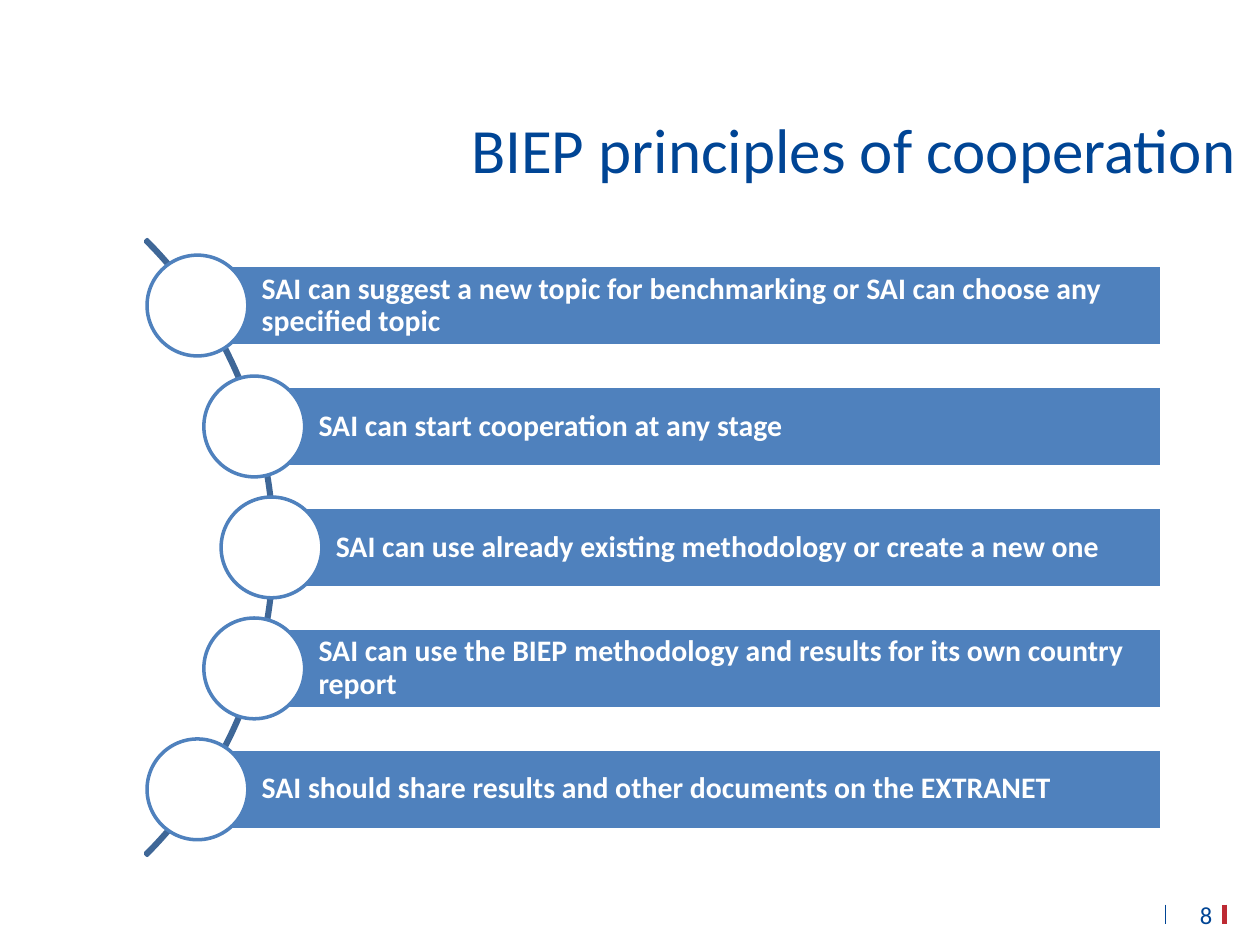
import math

import pptx
import pptx.dml.color
import pptx.enum.shapes
import pptx.enum.text
import pptx.oxml
import pptx.util
from pptx.dml.color import RGBColor
from pptx.util import Inches

NAVY = RGBColor(0x00, 0x45, 0x95)
RED = RGBColor(0xBD, 0x2A, 0x33)
BLUE = RGBColor(0x4F, 0x81, 0xBD)
DARK_BLUE = RGBColor(0x3F, 0x67, 0x97)
WHITE = RGBColor(0xFF, 0xFF, 0xFF)

SHAPES = pptx.enum.shapes.MSO_SHAPE
ALIGN = pptx.enum.text.PP_ALIGN
ANCHOR = pptx.enum.text.MSO_ANCHOR

PRINCIPLES = [
    "SAI can suggest a new topic for benchmarking or SAI can choose any specified topic",
    "SAI can start cooperation at any stage",
    "SAI can use already existing methodology or create a new one",
    "SAI can use the BIEP methodology and results for its own country report",
    "SAI should share results and other documents on the EXTRANET",
]


class SlideBuilder:
    """Holds the text style and the current page."""

    font_name = "Calibri"

    def __init__(self, page):
        self.page = page

    def fill_text(self, shape, text, insets, anchor, align, spacing, **font_format):
        frame = shape.text_frame
        sides = ("margin_left", "margin_top", "margin_right", "margin_bottom")
        frame_format = {side: Inches(inset) for side, inset in zip(sides, insets)}
        frame_format.update(word_wrap=True, vertical_anchor=anchor)
        for name, value in frame_format.items():
            setattr(frame, name, value)
        para = frame.paragraphs[0]
        para.alignment = align
        para.line_spacing = spacing
        span = para.add_run()
        span.text = text
        span.font.color.rgb = font_format.pop("color")
        for name, value in {"name": self.font_name, **font_format}.items():
            setattr(span.font, name, value)

    def text(self, place, text, size, insets, anchor, align=ALIGN.LEFT):
        box = self.page.shapes.add_textbox(*map(Inches, place))
        self.fill_text(box, text, insets, anchor, align, 1.0,
                       size=pptx.util.Pt(size), color=NAVY)

    def shape(self, kind, place, fill, outline):
        shape = self.page.shapes.add_shape(kind, *map(Inches, place))
        shape.shadow.inherit = False
        if fill is None:
            shape.fill.background()
        else:
            shape.fill.solid()
            shape.fill.fore_color.rgb = fill
        shape.line.color.rgb = outline
        shape.line.width = pptx.util.Pt(2)
        return shape

    def bar(self, place, text):
        bar = self.shape(SHAPES.RECTANGLE, place, BLUE, WHITE)
        self.fill_text(bar, text, (0.51, 0.05, 0.05, 0.05), ANCHOR.MIDDLE, ALIGN.LEFT,
                       0.9, size=pptx.util.Pt(17), bold=True, color=WHITE)

    def line(self, start, end, color, width):
        line = self.page.shapes.add_connector(
            pptx.enum.shapes.MSO_CONNECTOR.STRAIGHT, *map(Inches, start + end))
        line.line.color.rgb = color
        line.line.width = pptx.util.Pt(width)
        line._element.spPr.append(pptx.oxml.parse_xml(
            '<a:effectLst xmlns:a="http://schemas.openxmlformats.org/drawingml/2006/main"/>'))


def main():
    deck = pptx.Presentation()
    deck.slide_width, deck.slide_height = Inches(10), Inches(7.5)
    builder = SlideBuilder(deck.slides.add_slide(deck.slide_layouts[6]))

    # Page number between two marks
    builder.line((9.72, 7.18), (9.72, 7.33), RED, 3)
    builder.text((7.83, 7.09, 1.89, 0.34), "8", 14, (0.1, 0.05, 0.1, 0.05),
                 ANCHOR.TOP, ALIGN.RIGHT)
    builder.line((9.25, 7.18), (9.25, 7.33), NAVY, 1)

    # Title
    builder.text((3.74, 0.81, 9, 0.73), "BIEP principles of cooperation", 36,
                 (0, 0.05, 0.1, 0.05), ANCHOR.MIDDLE)

    # Arc behind the list
    arc_left, arc_top, arc_size = -4.73, 0.89, 6.91
    arc = builder.shape(SHAPES.BLOCK_ARC, (arc_left, arc_top, arc_size, arc_size),
                        None, DARK_BLUE)
    for index, value in enumerate((189, 27, 0.003)):
        arc.adjustments[index] = value

    # Bars and circles, centred along the arc
    center_x, center_y = arc_left + arc_size / 2, arc_top + arc_size / 2
    radius, pitch = 3.43, 0.96
    bar_right, bar_height, circle_size = 9.22, 0.64, 0.8
    for index, principle in enumerate(PRINCIPLES):
        offset = (index - (len(PRINCIPLES) - 1) / 2) * pitch
        x = center_x + math.sqrt(radius ** 2 - offset ** 2)
        y = center_y + offset
        builder.bar((x, y - bar_height / 2, bar_right - x, bar_height), principle)
        builder.shape(SHAPES.OVAL, (x - circle_size / 2, y - circle_size / 2,
                                    circle_size, circle_size), WHITE, BLUE)

    deck.save("out.pptx")


if __name__ == "__main__":
    main()
